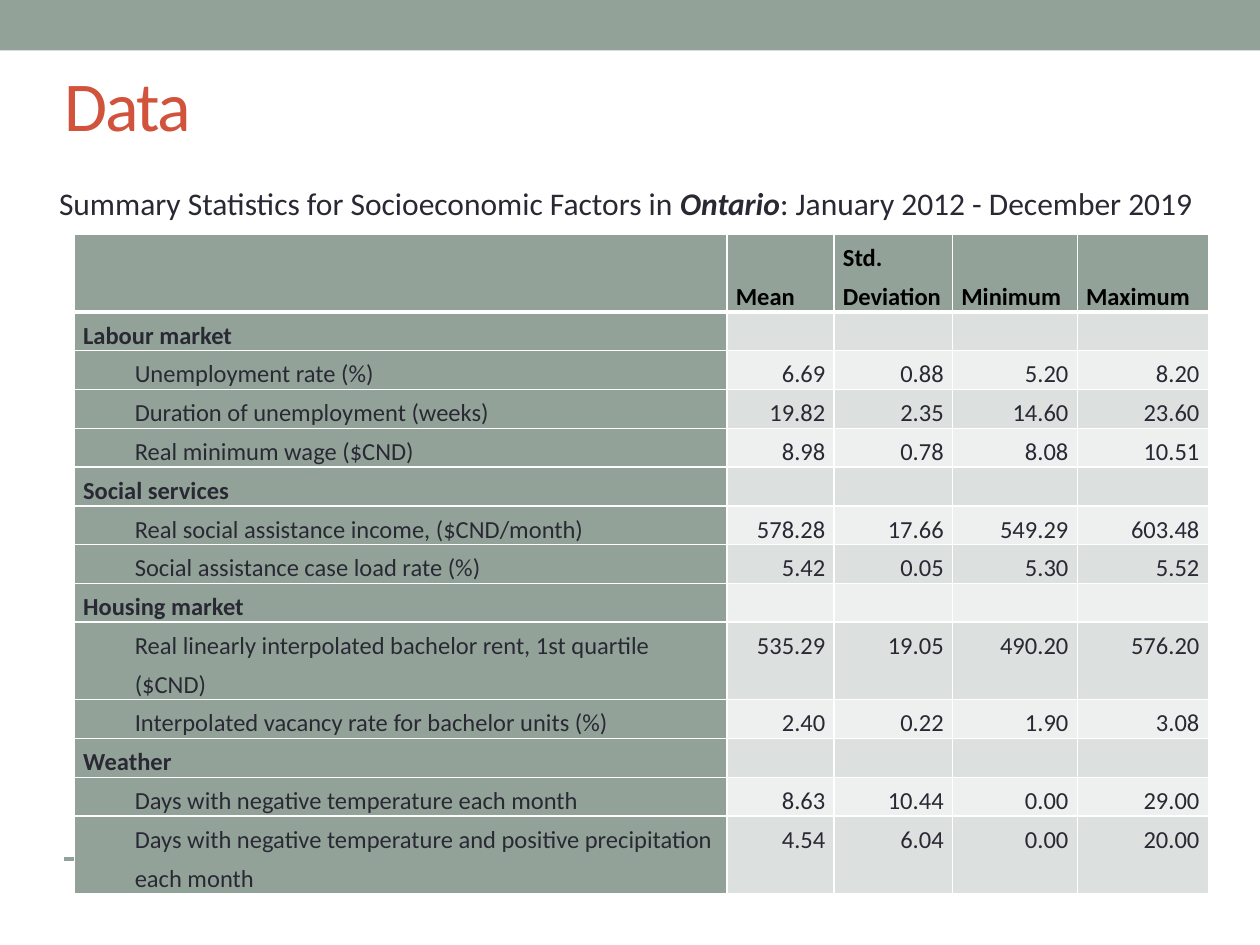
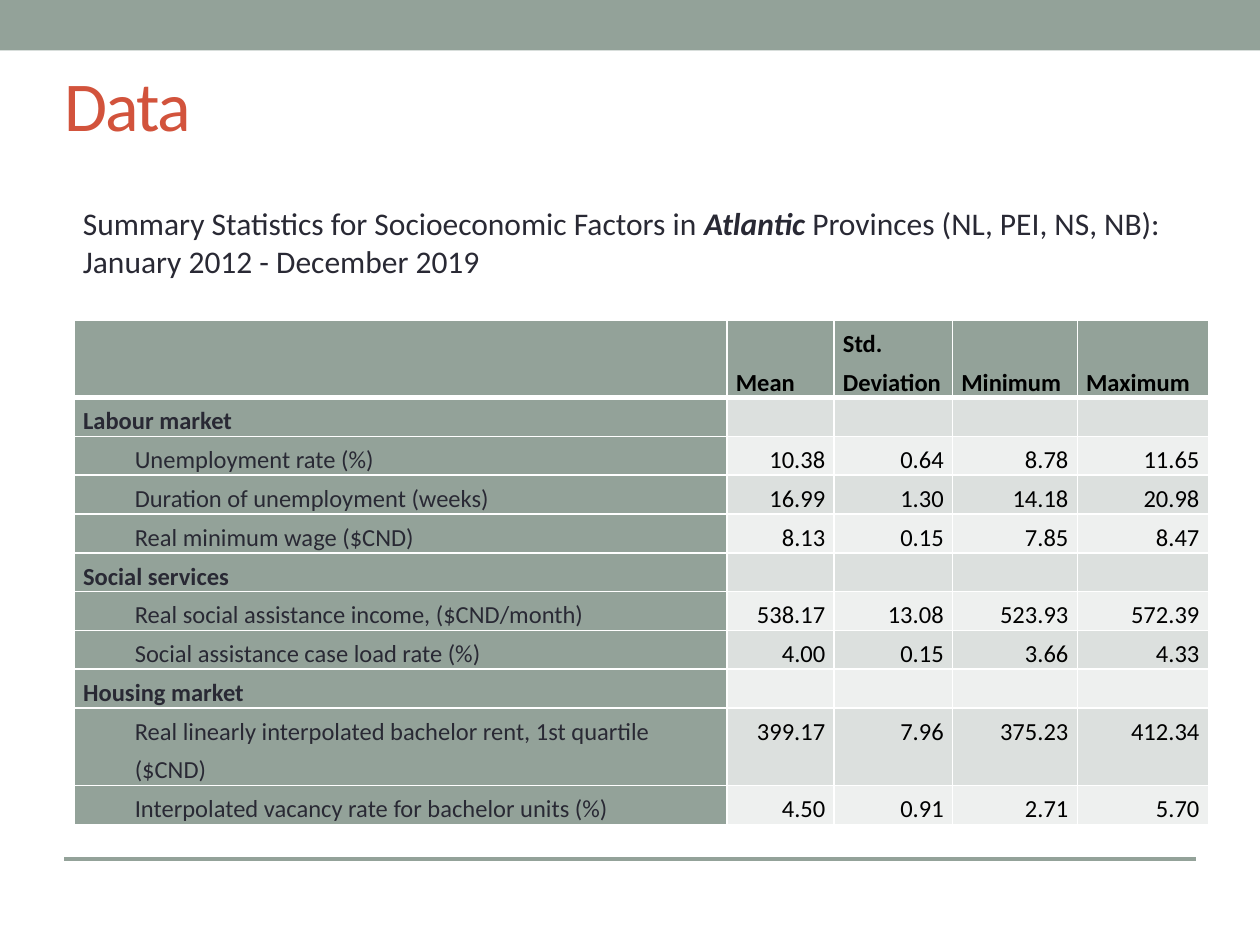
from dataclasses import dataclass
from typing import Any

import lxml.etree
import pptx
import pptx.dml.color
import pptx.enum.shapes
import pptx.enum.text
import pptx.oxml
import pptx.oxml.ns
import pptx.util

Inches = pptx.util.Inches
Pt = pptx.util.Pt
Align = pptx.enum.text.PP_ALIGN
Anchor = pptx.enum.text.MSO_ANCHOR
qn = pptx.oxml.ns.qn


@dataclass(frozen=True)
class Theme:
    font: str = "Calibri"
    sage: str = "93A299"
    red: str = "D2533C"
    ink: str = "292934"
    black: str = "000000"
    white: str = "FFFFFF"
    bands: tuple[str, str] = ("EEF0EF", "DCE0DE")
    head: int = 40
    note: int = 18
    cell: int = 14


@dataclass(frozen=True)
class Box:
    left: float
    top: float
    width: float
    height: float

    def place(self) -> tuple[int, ...]:
        return tuple(Inches(n) for n in (self.left, self.top, self.width, self.height))


@dataclass(frozen=True)
class Page:
    note: str
    spot: Box
    grid: Box
    tint: str
    groups: tuple[str, ...]
    stats: dict[str, str]


THEME = Theme()
TITLE = Box(0.41, 0.38, 9, 0.89)
HEADS = ("", "Mean", "Std. Deviation", "Minimum", "Maximum")
WIDTHS = (5.18, 0.85, 0.94, 0.99, 1.04)
HEAD_ROW, DATA_ROW = 0.55, 0.28
INDENT = 0.41

GROUPS = {
    "Labour market": (
        "Unemployment rate (%)",
        "Duration of unemployment (weeks)",
        "Real minimum wage ($CND)",
    ),
    "Social services": (
        "Real social assistance income, ($CND/month)",
        "Social assistance case load rate (%)",
    ),
    "Housing market": (
        "Real linearly interpolated bachelor rent, 1st quartile ($CND)",
        "Interpolated vacancy rate for bachelor units (%)",
    ),
    "Weather": (
        "Days with negative temperature each month",
        "Days with negative temperature and positive precipitation each month",
    ),
}
ITEMS = [item for group in GROUPS.values() for item in group]

PAGES = (
    Page(
        "Summary Statistics for Socioeconomic Factors in *Ontario*: January 2012 - December 2019",
        Box(0.37, 1.41, 9.29, 0.4),
        Box(0.59, 1.86, 9, 4.87),
        THEME.ink,
        tuple(GROUPS),
        dict(zip(ITEMS, (
            "6.69 0.88 5.20 8.20",
            "19.82 2.35 14.60 23.60",
            "8.98 0.78 8.08 10.51",
            "578.28 17.66 549.29 603.48",
            "5.42 0.05 5.30 5.52",
            "535.29 19.05 490.20 576.20",
            "2.40 0.22 1.90 3.08",
            "8.63 10.44 0.00 29.00",
            "4.54 6.04 0.00 20.00",
        ))),
    ),
    Page(
        "Summary Statistics for Socioeconomic Factors in *Atlantic *Provinces (NL, PEI, NS, NB): "
        "January 2012 - December 2019",
        Box(0.56, 1.57, 8.84, 0.71),
        Box(0.59, 2.54, 9, 3.72),
        THEME.black,
        tuple(GROUPS)[:3],
        dict(zip(ITEMS, (
            "10.38 0.64 8.78 11.65",
            "16.99 1.30 14.18 20.98",
            "8.13 0.15 7.85 8.47",
            "538.17 13.08 523.93 572.39",
            "4.00 0.15 3.66 4.33",
            "399.17 7.96 375.23 412.34",
            "4.50 0.91 2.71 5.70",
        ))),
    ),
)


def rgb(code: str) -> pptx.dml.color.RGBColor:
    return pptx.dml.color.RGBColor.from_string(code)


def paint(fill: Any, code: str) -> None:
    fill.solid()
    fill.fore_color.rgb = rgb(code)


def write(frame: Any, text: str, *, size: int, tint: str = THEME.ink, bold: bool = False,
          align: Any = Align.LEFT, lead: float | None = None, after: float | None = None,
          indent: float = 0, track: float = 0) -> None:
    para = frame.paragraphs[0]
    para.alignment = align
    if lead:
        para.line_spacing = lead
    if after:
        para.space_after = Pt(after)
    if indent:
        props = para._p.get_or_add_pPr()
        props.set("marL", str(Inches(indent)))
        props.set("indent", "0")
    if not text:
        lexical = lxml.etree.SubElement(para._p, qn("a:endParaRPr"))
        lexical.set("sz", str(size * 100))
        return
    for spot, part in enumerate(text.split("*")):
        strong = spot % 2 == 1
        run = para.add_run()
        run.text = part
        run.font.name = THEME.font
        run.font.size = Pt(size)
        run.font.bold = bold or strong
        run.font.italic = strong
        run.font.color.rgb = rgb(tint)
        if track:
            run._r.get_or_add_rPr().set("spc", str(int(track * 100)))


def edge(cell: Any, row: int) -> None:
    props = cell._tc.get_or_add_tcPr()
    for side in "LRTB":
        thick = 3 if (row, side) in ((0, "B"), (1, "T")) else 1
        line = lxml.etree.SubElement(props, qn(f"a:ln{side}"), w=str(Pt(thick)))
        solid = lxml.etree.SubElement(line, qn("a:solidFill"))
        lxml.etree.SubElement(solid, qn("a:srgbClr"), val=THEME.white)


def fill_cell(cell: Any, text: str, row: int, col: int, **style: Any) -> None:
    edge(cell, row)
    plain = row > 0 and col > 0
    paint(cell.fill, THEME.bands[row % 2] if plain else THEME.sage)
    cell.margin_left = cell.margin_right = Inches(0.07)
    cell.margin_top = cell.margin_bottom = 0
    cell.vertical_anchor = Anchor.TOP if row else Anchor.BOTTOM
    write(cell.text_frame, text, size=THEME.cell, lead=1.3, after=8, **style)


def add_grid(slide: Any, page: Page) -> None:
    rows: list[tuple[str, ...]] = [HEADS]
    for group in page.groups:
        rows.append((group, "", "", "", ""))
        rows.extend((item, *page.stats[item].split()) for item in GROUPS[group])
    frame = slide.shapes.add_table(len(rows), len(HEADS), *page.grid.place())
    table = frame.table
    table.horz_banding = False
    for col, width in zip(table.columns, WIDTHS):
        col.width = Inches(width)
    for row, texts in enumerate(rows):
        table.rows[row].height = Inches(DATA_ROW if row else HEAD_ROW)
        for col, text in enumerate(texts):
            if row == 0:
                style = dict(tint=THEME.black, bold=True)
            elif col:
                style = dict(tint=page.tint, align=Align.RIGHT)
            elif text in GROUPS:
                style = dict(bold=True)
            else:
                style = dict(indent=INDENT)
            fill_cell(table.cell(row, col), text, row, col, **style)


def dress(master: Any, slide: Any) -> None:
    band = slide.shapes.add_shape(
        pptx.enum.shapes.MSO_SHAPE.RECTANGLE, *Box(0, 0, 10, 0.4).place())
    band.shadow.inherit = False
    paint(band.fill, THEME.sage)
    band.line.fill.background()
    rule = slide.shapes.add_connector(
        pptx.enum.shapes.MSO_CONNECTOR.STRAIGHT,
        Inches(0.51), Inches(6.82), Inches(9.49), Inches(6.82))
    rule.line.color.rgb = rgb(THEME.sage)
    rule.line.width = Pt(2.08)
    lxml.etree.SubElement(rule.element.spPr, qn("a:effectLst"))
    for spot, shape in enumerate((band, rule)):
        shape.element.xpath(".//p:cNvPr")[0].set("id", str(20 + spot))
        master.element.cSld.spTree.insert(2 + spot, shape.element)


def add_page(deck: Any, page: Page) -> Any:
    slide = deck.slides.add_slide(deck.slide_layouts.get_by_name("Title Only"))
    title = slide.shapes.title
    title.left, title.top, title.width, title.height = TITLE.place()
    title.text_frame.vertical_anchor = Anchor.MIDDLE
    write(title.text_frame, "Data", size=THEME.head, tint=THEME.red, track=-1)
    add_grid(slide, page)
    note = slide.shapes.add_textbox(*page.spot.place())
    note.text_frame.word_wrap = True
    note.text_frame.auto_size = pptx.enum.text.MSO_AUTO_SIZE.SHAPE_TO_FIT_TEXT
    write(note.text_frame, page.note, size=THEME.note)
    return slide


def main() -> None:
    deck = pptx.Presentation()
    deck.slide_width, deck.slide_height = Inches(10), Inches(7.5)
    slides = [add_page(deck, page) for page in PAGES]
    dress(deck.slide_master, slides[0])
    deck.save("out.pptx")


if __name__ == "__main__":
    main()
